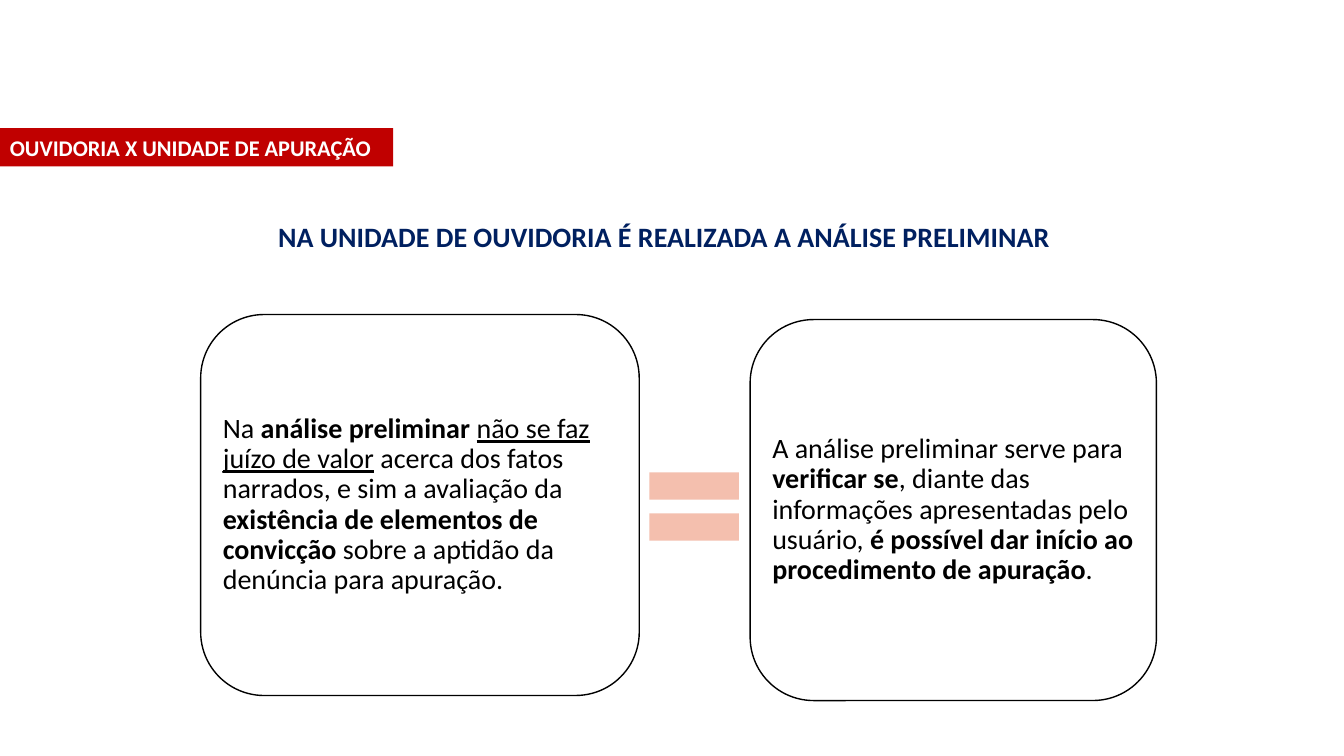
from dataclasses import dataclass

import pptx
import pptx.util
from pptx.dml.color import RGBColor
from pptx.enum.shapes import MSO_SHAPE
from pptx.enum.text import MSO_ANCHOR, PP_ALIGN
from pptx.util import Inches


@dataclass(frozen=True)
class Theme:
    font: str = "Calibri"
    black: str = "000000"
    white: str = "FFFFFF"
    red: str = "C00000"
    navy: str = "002060"
    salmon: str = "F4BFAE"
    banner_size: int = 16
    body_size: int = 20


THEME = Theme()


def add_shape(s, kind, x, y, w, h, fill, line=None):
    sp = s.shapes.add_shape(kind, Inches(x), Inches(y), Inches(w), Inches(h))
    sp.shadow.inherit = False
    sp.fill.solid()
    sp.fill.fore_color.rgb = RGBColor.from_string(fill)
    if line:
        sp.line.color.rgb = RGBColor.from_string(line)
        sp.line.width = pptx.util.Pt(1)
    else:
        sp.line.fill.background()
    return sp


def add_run(p, text, size=THEME.body_size, color=THEME.black, bold=False, underline=False):
    r = p.add_run()
    r.text = text
    r.font.name = THEME.font
    r.font.size = pptx.util.Pt(size)
    r.font.color.rgb = RGBColor.from_string(color)
    r.font.bold = bold
    r.font.underline = underline


def add_heading(s, text, x, y, w, fill, align=PP_ALIGN.LEFT, **fmt):
    sp = add_shape(s, MSO_SHAPE.RECTANGLE, x, y, w, 0.38, fill)
    tf = sp.text_frame
    tf.word_wrap = True
    tf.vertical_anchor = MSO_ANCHOR.BOTTOM
    p = tf.paragraphs[0]
    p.alignment = align
    add_run(p, text, bold=True, **fmt)


def add_card(s, x, y, w, text_w, runs):
    """Rounded card with a text box inset inside it; runs are (text, format) pairs."""
    height, inset = 3.78, 0.19
    add_shape(s, MSO_SHAPE.ROUNDED_RECTANGLE, x, y, w, height, THEME.white, THEME.black)
    tb = s.shapes.add_textbox(Inches(x + inset), Inches(y + inset),
                              Inches(text_w), Inches(height - 2 * inset))
    tf = tb.text_frame
    tf.word_wrap = True
    tf.vertical_anchor = MSO_ANCHOR.MIDDLE
    tf.margin_left = tf.margin_right = tf.margin_top = tf.margin_bottom = Inches(0.03)
    p = tf.paragraphs[0]
    p.line_spacing = 0.9
    for text, fmt in runs:
        add_run(p, text, **fmt)


def main():
    prs = pptx.Presentation()
    prs.slide_width, prs.slide_height = Inches(13.33), Inches(7.5)
    s = prs.slides.add_slide(prs.slide_layouts[6])
    plain, bold, underlined = {}, {"bold": True}, {"underline": True}

    add_card(s, 1.99, 3.12, 4.35, 3.98, [
        ("Na ", plain),
        ("análise preliminar ", bold),
        ("não se faz juízo de valor", underlined),
        (" acerca dos fatos narrados, e sim a avaliação da ", plain),
        ("existência de elementos de convicção ", bold),
        ("sobre a aptidão da denúncia para apuração.", plain),
    ])
    add_shape(s, MSO_SHAPE.MATH_EQUAL, 6.28, 4.45, 1.21, 1.15, THEME.salmon)
    add_card(s, 7.44, 3.17, 4.03, 3.66, [
        ("A análise preliminar serve para ", plain),
        ("verificar se", bold),
        (", diante das informações apresentadas pelo usuário, ", plain),
        ("é possível dar início ao procedimento de apuração", bold),
        (".", plain),
    ])
    add_heading(s, "OUVIDORIA X UNIDADE DE APURAÇÃO", 0, 1.27, 3.9, THEME.red,
                size=THEME.banner_size, color=THEME.white)
    add_heading(s, "NA UNIDADE DE OUVIDORIA É REALIZADA A ANÁLISE PRELIMINAR",
                2.66, 2.18, 8.02, THEME.white, color=THEME.navy)
    prs.save("out.pptx")


if __name__ == "__main__":
    main()
